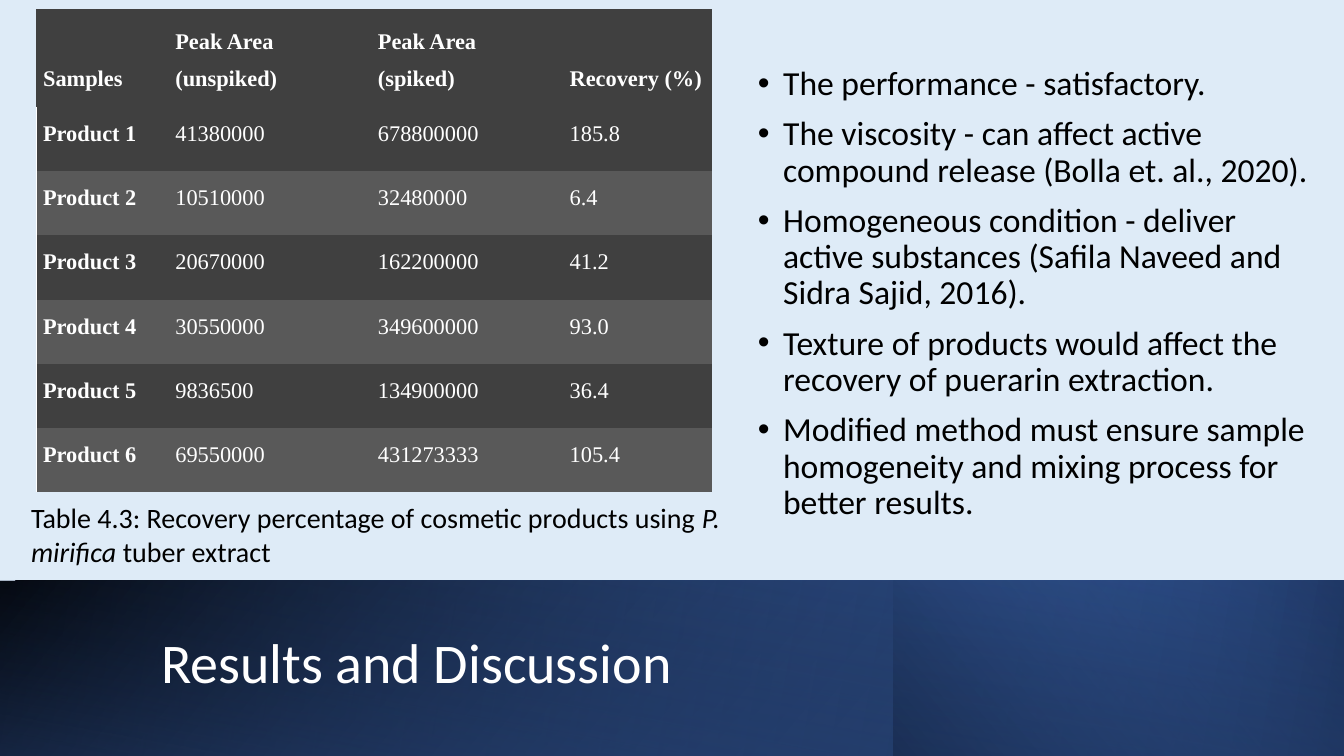
from dataclasses import dataclass
from typing import Any

from lxml import etree
from pptx import Presentation
from pptx.dml.color import RGBColor
from pptx.enum.shapes import MSO_SHAPE
from pptx.enum.text import MSO_ANCHOR, MSO_AUTO_SIZE, PP_ALIGN
from pptx.oxml.ns import qn
from pptx.util import Pt

RECTANGLE = MSO_SHAPE.RECTANGLE
TOP, MIDDLE, BOTTOM = MSO_ANCHOR.TOP, MSO_ANCHOR.MIDDLE, MSO_ANCHOR.BOTTOM
NO_FIT, GROW = MSO_AUTO_SIZE.NONE, MSO_AUTO_SIZE.SHAPE_TO_FIT_TEXT
LEFT = PP_ALIGN.LEFT
PLAIN_TABLE_STYLE = "{2D5ABB26-0587-4C30-8999-92F81FD0307C}"


@dataclass(frozen=True)
class Theme:
    background: str = "DEEBF7"
    white: str = "FFFFFF"
    black: str = "000000"
    navy: str = "203864"
    blue: str = "4472C4"
    dark_row: str = "404040"
    light_row: str = "595959"
    font: str = "Calibri"
    table_font: str = "Times New Roman"
    title_size: float = 40
    body_size: float = 24
    caption_size: float = 20
    table_size: float = 16


@dataclass(frozen=True)
class Box:
    left: float
    top: float
    width: float
    height: float

    def lengths(self) -> tuple[Pt, Pt, Pt, Pt]:
        return Pt(self.left), Pt(self.top), Pt(self.width), Pt(self.height)


@dataclass(frozen=True)
class Stop:
    color: str
    position: float
    opacity: int = 100


@dataclass(frozen=True)
class Band:
    box: Box
    angle: float
    stops: tuple[Stop, Stop]
    flipped: bool = True
    rotation: float = 0


THEME = Theme()
FOOTER = Box(0, 414.7, 960, 125.3)
BANDS = [
    Band(FOOTER, 140, (Stop(THEME.black, 0), Stop(THEME.blue, 1))),
    Band(FOOTER, 170, (Stop(THEME.blue, 0, 0), Stop(THEME.navy, 1))),
    Band(Box(638.6, 414.7, 321.4, 125.3), 220,
         (Stop(THEME.navy, 0), Stop(THEME.blue, 1, 0))),
    Band(Box(-0.5, 414.5, 960, 126), 280,
         (Stop(THEME.black, 0, 0), Stop(THEME.navy, 0.99, 55)),
         flipped=False, rotation=180),
]
TITLE = "Results and Discussion"
TITLE_BOX = Box(108, 434.2, 779, 81.4)
POINTS = [
    "The performance - satisfactory.",
    "The viscosity - can affect active compound release (Bolla et. al., 2020).",
    "Homogeneous condition - deliver active substances "
    "(Safila Naveed and Sidra Sajid, 2016).",
    "Texture of products would affect the recovery of puerarin extraction.",
    "Modified method must ensure sample homogeneity and mixing process "
    "for better results.",
]
POINTS_BOX = Box(534.2, 13, 411, 394)
CAPTION = [
    ("Table 4.3: Recovery percentage of cosmetic products using ", False),
    ("P. mirifica", True),
    (" tuber extract", False),
]
CAPTION_BOX = Box(15.1, 354.2, 527.8, 55.4)
RECOVERY = [
    ("Samples", "Peak Area (unspiked)", "Peak Area (spiked)", "Recovery (%)"),
    ("Product 1", "41380000", "678800000", "185.8"),
    ("Product 2", "10510000", "32480000", "6.4"),
    ("Product 3", "20670000", "162200000", "41.2"),
    ("Product 4", "30550000", "349600000", "93.0"),
    ("Product 5", "9836500", "134900000", "36.4"),
    ("Product 6", "69550000", "431273333", "105.4"),
]
TABLE_BOX = Box(25.8, 6.5, 483, 341.3)
COLUMN_WIDTHS = [94.5, 144.7, 137, 106.8]
HEADER_HEIGHT, ROW_HEIGHT = 57.6, 45.9
CELL_MARGINS = {"margin_left": Pt(5), "margin_top": Pt(1.5),
                "margin_right": Pt(5.8), "margin_bottom": Pt(10.8)}


def apply(target: Any, values: dict[str, Any]) -> None:
    for name, value in values.items():
        setattr(target, name, value)


def set_font(font: Any, name: str, size: float, color: str, **styles: bool) -> None:
    apply(font, {"name": name, "size": Pt(size), **styles})
    font.color.rgb = RGBColor.from_string(color)


def place(sp: Any, box: Box) -> None:
    apply(sp, dict(zip(("left", "top", "width", "height"), box.lengths())))


def add_band(slide: Any, band: Band) -> None:
    sp = slide.shapes.add_shape(RECTANGLE, *band.box.lengths())
    sp.shadow.inherit = False
    sp.rotation = band.rotation
    sp.line.fill.background()
    if band.flipped:
        sp._element.spPr.xfrm.set("flipH", "1")
    sp.fill.gradient()
    sp.fill.gradient_angle = 360 - band.angle
    for gs, stop in zip(sp.fill.gradient_stops, band.stops):
        gs.color.rgb = RGBColor.from_string(stop.color)
        gs.position = stop.position
    colors = sp._element.spPr.iter(qn("a:srgbClr"))
    for color, stop in zip(colors, band.stops):
        etree.SubElement(color, qn("a:alpha"), val=str(stop.opacity * 1000))


def add_title(slide: Any) -> None:
    sp = slide.shapes.title
    place(sp, TITLE_BOX)
    slide.shapes._spTree.append(sp._element)  # in front of the bands
    tf = sp.text_frame
    tf.text = TITLE
    apply(tf, {"auto_size": NO_FIT, "vertical_anchor": MIDDLE, "word_wrap": True})
    p = tf.paragraphs[0]
    apply(p, {"alignment": LEFT, "line_spacing": 0.9})
    set_font(p.runs[0].font, THEME.font, THEME.title_size, THEME.white)


def add_points(slide: Any) -> None:
    sp = slide.placeholders[1]
    place(sp, POINTS_BOX)
    tf = sp.text_frame
    tf.text = "\n".join(POINTS)
    apply(tf, {"auto_size": NO_FIT, "vertical_anchor": MIDDLE, "word_wrap": True})
    for p in tf.paragraphs:
        apply(p, {"line_spacing": 0.9, "space_before": Pt(10)})
        pPr = p._p.get_or_add_pPr()
        pPr.set("marL", str(Pt(18)))
        pPr.set("indent", str(-Pt(18)))
        etree.SubElement(pPr, qn("a:buFont"), typeface="Arial")
        etree.SubElement(pPr, qn("a:buChar"), char="•")
        set_font(p.runs[0].font, THEME.font, THEME.body_size, THEME.black)


def add_caption(slide: Any) -> None:
    tf = slide.shapes.add_textbox(*CAPTION_BOX.lengths()).text_frame
    apply(tf, {"word_wrap": True, "auto_size": GROW})
    p = tf.paragraphs[0]
    p.space_after = Pt(6)
    for text, italic in CAPTION:
        r = p.add_run()
        r.text = text
        set_font(r.font, THEME.font, THEME.caption_size, THEME.black, italic=italic)


def add_left_border(cell: Any) -> None:
    ln = etree.Element(qn("a:lnL"), w=str(Pt(1)))
    fill = etree.SubElement(ln, qn("a:solidFill"))
    etree.SubElement(fill, qn("a:srgbClr"), val=THEME.white)
    cell._tc.get_or_add_tcPr().insert(0, ln)


def add_recovery_table(slide: Any) -> None:
    frame = slide.shapes.add_table(len(RECOVERY), len(COLUMN_WIDTHS),
                                   *TABLE_BOX.lengths())
    table = frame.table
    table._tbl.tblPr.find(qn("a:tableStyleId")).text = PLAIN_TABLE_STYLE
    for column, width in zip(table.columns, COLUMN_WIDTHS):
        column.width = Pt(width)
    for i, values in enumerate(RECOVERY):
        header = i == 0
        table.rows[i].height = Pt(HEADER_HEIGHT if header else ROW_HEIGHT)
        shade = THEME.dark_row if header or i % 2 else THEME.light_row
        for j, value in enumerate(values):
            cell = table.cell(i, j)
            cell.text = value
            apply(cell, {**CELL_MARGINS, "vertical_anchor": BOTTOM if header else TOP})
            cell.fill.solid()
            cell.fill.fore_color.rgb = RGBColor.from_string(shade)
            p = cell.text_frame.paragraphs[0]
            p.line_spacing = 1.5
            set_font(p.runs[0].font, THEME.table_font, THEME.table_size,
                     THEME.white, bold=header or j == 0)
            if j == 0 and not header:
                add_left_border(cell)


def main() -> None:
    prs = Presentation()
    apply(prs, {"slide_width": Pt(960), "slide_height": Pt(540)})
    slide = prs.slides.add_slide(prs.slide_layouts[1])
    slide.background.fill.solid()
    slide.background.fill.fore_color.rgb = RGBColor.from_string(THEME.background)
    for band in BANDS:
        add_band(slide, band)
    add_title(slide)
    add_points(slide)
    add_caption(slide)
    add_recovery_table(slide)
    prs.save("out.pptx")


if __name__ == "__main__":
    main()
